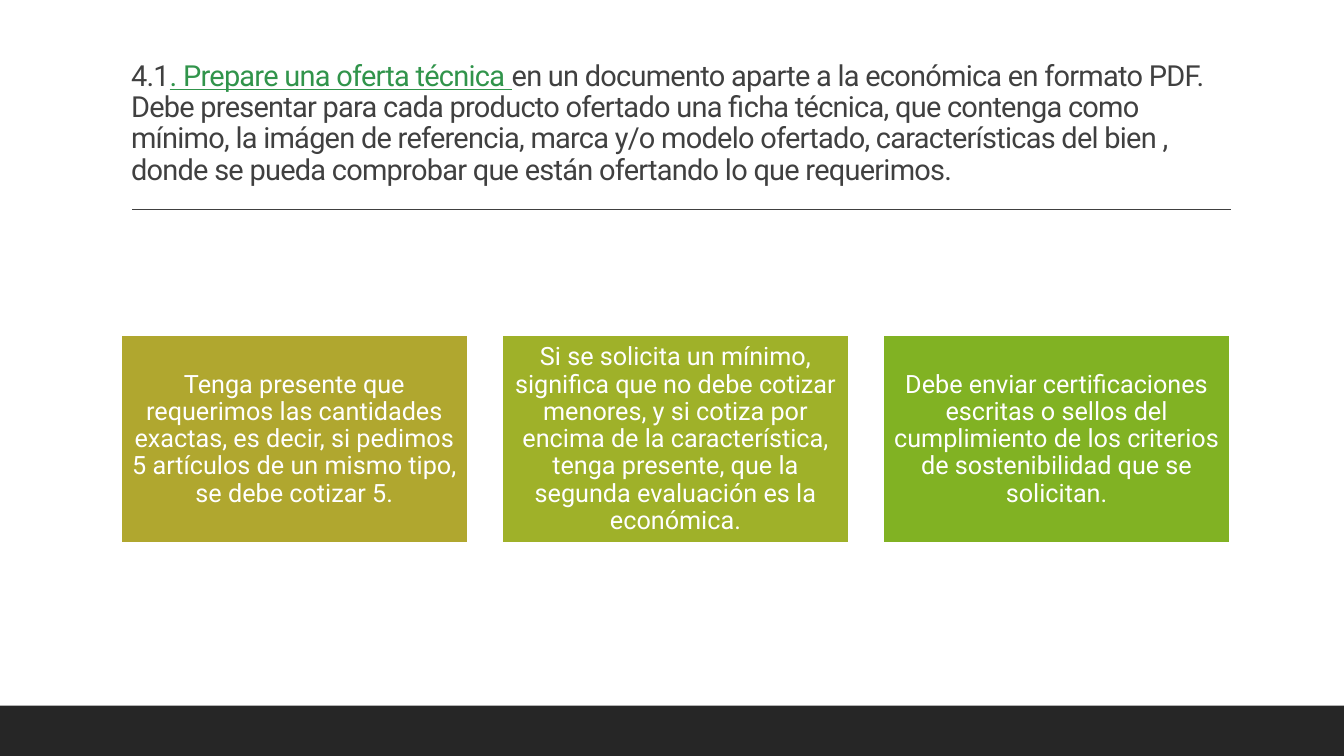
from dataclasses import dataclass
from lxml.etree import SubElement
from pptx import Presentation
from pptx.dml.color import RGBColor
from pptx.enum.shapes import MSO_CONNECTOR, MSO_SHAPE
from pptx.enum.text import MSO_ANCHOR, MSO_AUTO_SIZE, PP_ALIGN
from pptx.oxml.ns import qn
from pptx.util import Inches, Pt


@dataclass(frozen=True)
class Theme:
    font: str = "Roboto"
    ink: str = "404040"
    link: str = "31944B"
    white: str = "FFFFFF"
    footer: str = "262626"
    title_size: float = 20.7
    card_size: float = 18


THEME = Theme()

# Content: title pieces as (text, colour, underlined), cards as (fill, text)
TITLE = [
    ("4.1", THEME.ink, False),
    (". Prepare una oferta técnica ", THEME.link, True),
    ("en un documento aparte a la económica en formato PDF. Debe presentar para cada "
     "producto ofertado una ficha técnica, que contenga como mínimo, la imágen de "
     "referencia, marca y/o modelo ofertado, características del bien , donde se pueda "
     "comprobar que están ofertando lo que requerimos.", THEME.ink, False),
]
CARDS = [
    ("B0A72F", "Tenga presente que requerimos las cantidades exactas, es decir, si pedimos "
               "5 artículos de un mismo tipo, se debe cotizar 5."),
    ("9FB129", "Si se solicita un mínimo, significa que no debe cotizar menores, y si cotiza "
               "por encima de la característica, tenga presente, que la segunda evaluación "
               "es la económica."),
    ("81B223", "Debe enviar certificaciones escritas o sellos del cumplimiento de los "
               "criterios de sostenibilidad que se solicitan."),
]

# Grid, in inches
WIDTH, HEIGHT = 13.33, 7.5
MARGIN, CONTENT_WIDTH = 1.2, 11
GAP = 0.34
CARD_WIDTH = (CONTENT_WIDTH - GAP * (len(CARDS) - 1)) / len(CARDS)
CARD_TOP, CARD_HEIGHT = 3.33, 2.06
TITLE_TOP, TITLE_HEIGHT = 0.31, 1.59
RULE_LEFT, RULE_RIGHT, RULE_TOP = 1.31, 12.21, 2.08
FOOTER_HEIGHT = 0.5


def color(value):
    return RGBColor.from_string(value)


def add_text(para, text, *, size, ink, underline=False, spacing=None):
    span = para.add_run()
    span.text = text
    span.font.name = THEME.font
    span.font.size = Pt(size)
    span.font.color.rgb = color(ink)
    span.font.underline = underline
    if spacing is not None:
        span.font._element.set("spc", str(round(spacing * 100)))


def add_box(page, left, top, width, height, fill, outline=None):
    box = page.shapes.add_shape(MSO_SHAPE.RECTANGLE, Inches(left), Inches(top),
                                Inches(width), Inches(height))
    box.shadow.inherit = False
    box.fill.solid()
    box.fill.fore_color.rgb = color(fill)
    if outline:
        box.line.color.rgb = color(outline)
        box.line.width = Pt(1.25)
    else:
        box.line.fill.background()
    return box


def add_title(page):
    title = page.shapes.title
    title.left, title.top = Inches(MARGIN), Inches(TITLE_TOP)
    title.width, title.height = Inches(CONTENT_WIDTH), Inches(TITLE_HEIGHT)
    frame = title.text_frame
    frame.word_wrap = True
    frame.auto_size = MSO_AUTO_SIZE.NONE
    frame.vertical_anchor = MSO_ANCHOR.BOTTOM
    para = frame.paragraphs[0]
    para.alignment = PP_ALIGN.LEFT
    para.line_spacing = 0.9
    for text, ink, underline in TITLE:
        add_text(para, text, size=THEME.title_size, ink=ink, underline=underline, spacing=-0.5)


def add_rule(page):
    rule = page.shapes.add_connector(MSO_CONNECTOR.STRAIGHT, Inches(RULE_LEFT), Inches(RULE_TOP),
                                     Inches(RULE_RIGHT), Inches(RULE_TOP))
    rule.line.color.rgb = color(THEME.ink)
    rule.line.width = Pt(1)
    SubElement(rule._element.spPr, qn("a:effectLst"))


def add_card(page, column, fill, text):
    left = MARGIN + column * (CARD_WIDTH + GAP)
    card = add_box(page, left, CARD_TOP, CARD_WIDTH, CARD_HEIGHT, fill, THEME.white)
    frame = card.text_frame
    frame.word_wrap = True
    frame.vertical_anchor = MSO_ANCHOR.MIDDLE
    frame.margin_left = frame.margin_right = Inches(0.07)
    frame.margin_top = frame.margin_bottom = Inches(0.07)
    para = frame.paragraphs[0]
    para.alignment = PP_ALIGN.CENTER
    para.line_spacing = 0.9
    add_text(para, text, size=THEME.card_size, ink=THEME.white)


def main():
    deck = Presentation()
    deck.slide_width, deck.slide_height = Inches(WIDTH), Inches(HEIGHT)
    page = deck.slides.add_slide(deck.slide_layouts[5])
    page.background.fill.solid()
    page.background.fill.fore_color.rgb = color(THEME.white)

    # Heading, rule and footer band
    add_title(page)
    add_rule(page)
    add_box(page, 0, HEIGHT - FOOTER_HEIGHT, WIDTH, FOOTER_HEIGHT, THEME.footer)

    # Row of advice cards
    for column, (fill, text) in enumerate(CARDS):
        add_card(page, column, fill, text)

    deck.save("out.pptx")


if __name__ == "__main__":
    main()
